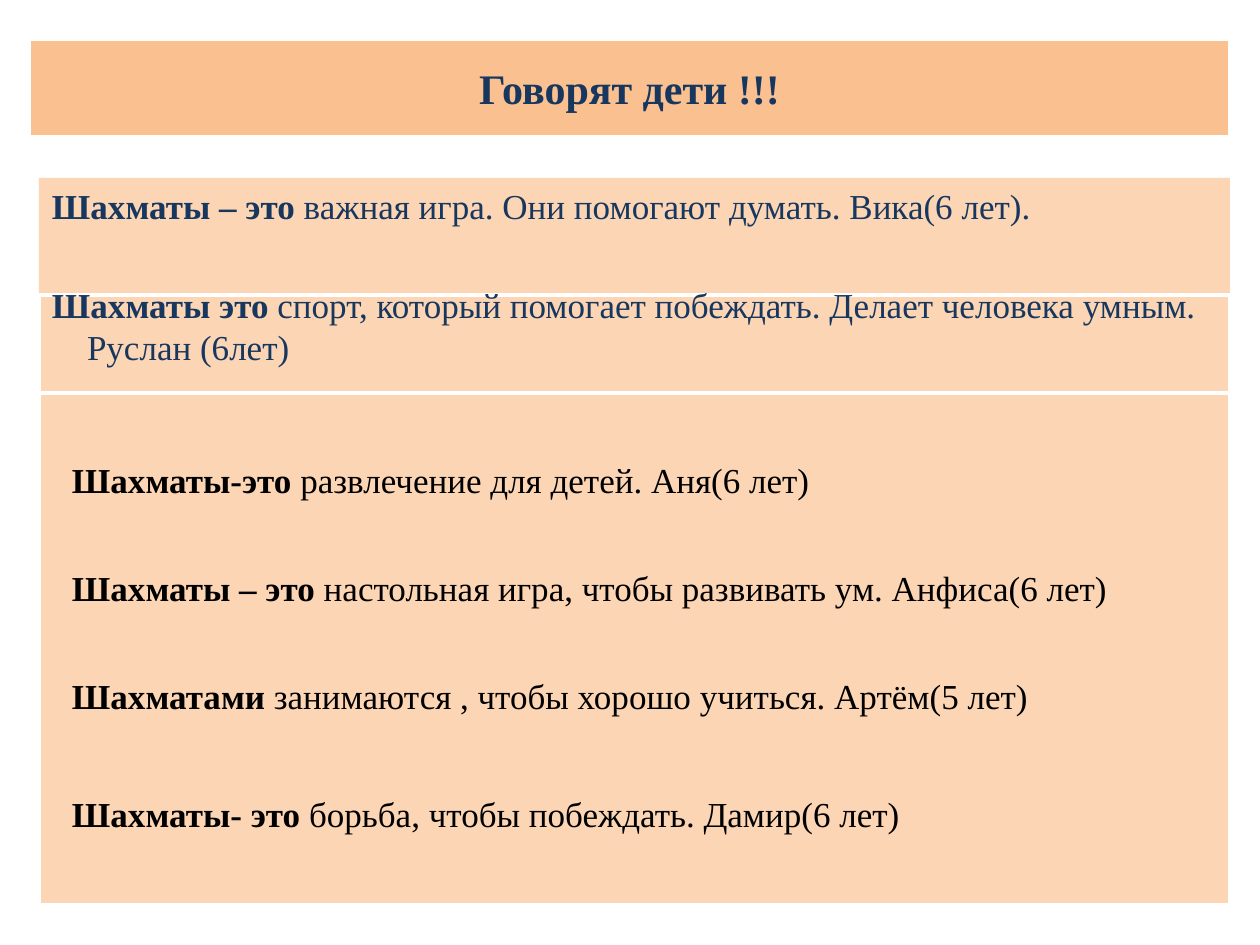
from pptx import Presentation
from pptx.dml.color import RGBColor
from pptx.enum.shapes import MSO_SHAPE
from pptx.enum.text import MSO_ANCHOR, PP_ALIGN
from pptx.util import Pt

SCALE = 914400 / 126
FONT = "Times New Roman"
COLORS = {"band": "FAC090", "panel": "FCD5B5", "line": "FFFFFF",
          "navy": "17375E", "black": "000000"}


def px(n):
    return round(n * SCALE)


def rgb(name):
    return RGBColor.from_string(COLORS[name])


def place(shape, box):
    shape.left, shape.top, shape.width, shape.height = map(px, box)


def paint(shape, fill, edge=True):
    shape.fill.solid()
    shape.fill.fore_color.rgb = rgb(fill)
    if edge:
        shape.line.color.rgb = rgb("line")
        shape.line.width = Pt(2)
    else:
        shape.line.fill.background()


def write(shape, bold, plain="", size=20, color="black", align=PP_ALIGN.LEFT,
          anchor=MSO_ANCHOR.TOP, hang=0, foot=6):
    frame = shape.text_frame
    frame.word_wrap = True
    frame.vertical_anchor = anchor
    frame.margin_left = frame.margin_right = px(13)
    frame.margin_top, frame.margin_bottom = px(6), px(foot)
    para = frame.paragraphs[0]
    para.alignment = align
    if hang:
        props = para._p.get_or_add_pPr()
        props.set("marL", str(px(hang)))
        props.set("indent", str(-px(hang)))
    for text, heavy in ((bold, True), (plain, False)):
        if text:
            run = para.add_run()
            run.text = text
            run.font.name = FONT
            run.font.size = Pt(size)
            run.font.bold = heavy
            run.font.color.rgb = rgb(color)


def panel(slide, box, edge=True):
    shape = slide.shapes.add_shape(MSO_SHAPE.RECTANGLE, *map(px, box))
    shape.shadow.inherit = False
    paint(shape, "panel", edge)
    return shape


def header(slide, box):
    title = slide.shapes.title
    place(title, box)
    paint(title, "band")
    write(title, "Говорят дети !!!", size=24, color="navy",
          align=PP_ALIGN.CENTER, anchor=MSO_ANCHOR.MIDDLE)


def quotes(slide, box):
    left, top, width, height = box
    first = panel(slide, (left, top, width, 131), edge=False)
    write(first, "Шахматы – это ", "важная игра. Они помогают думать. Вика(6 лет).",
          color="navy")
    second = panel(slide, (left, top + 117, width, height - 117))
    write(second, "Шахматы это ",
          "спорт, который помогает побеждать. Делает человека умным. Руслан (6лет)",
          color="navy", anchor=MSO_ANCHOR.MIDDLE, hang=35, foot=42)


def replies(slide, box):
    left, top, width, height = box
    panel(slide, box)
    lines = (
        (59, "Шахматы-это", " развлечение для детей. Аня(6 лет)"),
        (167, "Шахматы – это ", "настольная игра, чтобы развивать ум. Анфиса(6 лет)"),
        (275, "Шахматами", " занимаются , чтобы хорошо учиться. Артём(5 лет)"),
        (393, "Шахматы- это ", "борьба, чтобы побеждать. Дамир(6 лет)"),
    )
    for drop, bold, plain in lines:
        label = slide.shapes.add_textbox(
            px(left + 20), px(top + drop), px(width - 78), px(55))
        write(label, bold, plain)


def main():
    deck = Presentation()
    deck.slide_width, deck.slide_height = px(1260), px(945)
    slide = deck.slides.add_slide(deck.slide_layouts[5])
    header(slide, (29, 39, 1201, 98))
    quotes(slide, (39, 178, 1191, 215))
    replies(slide, (39, 393, 1191, 512))
    deck.save("out.pptx")


if __name__ == "__main__":
    main()
